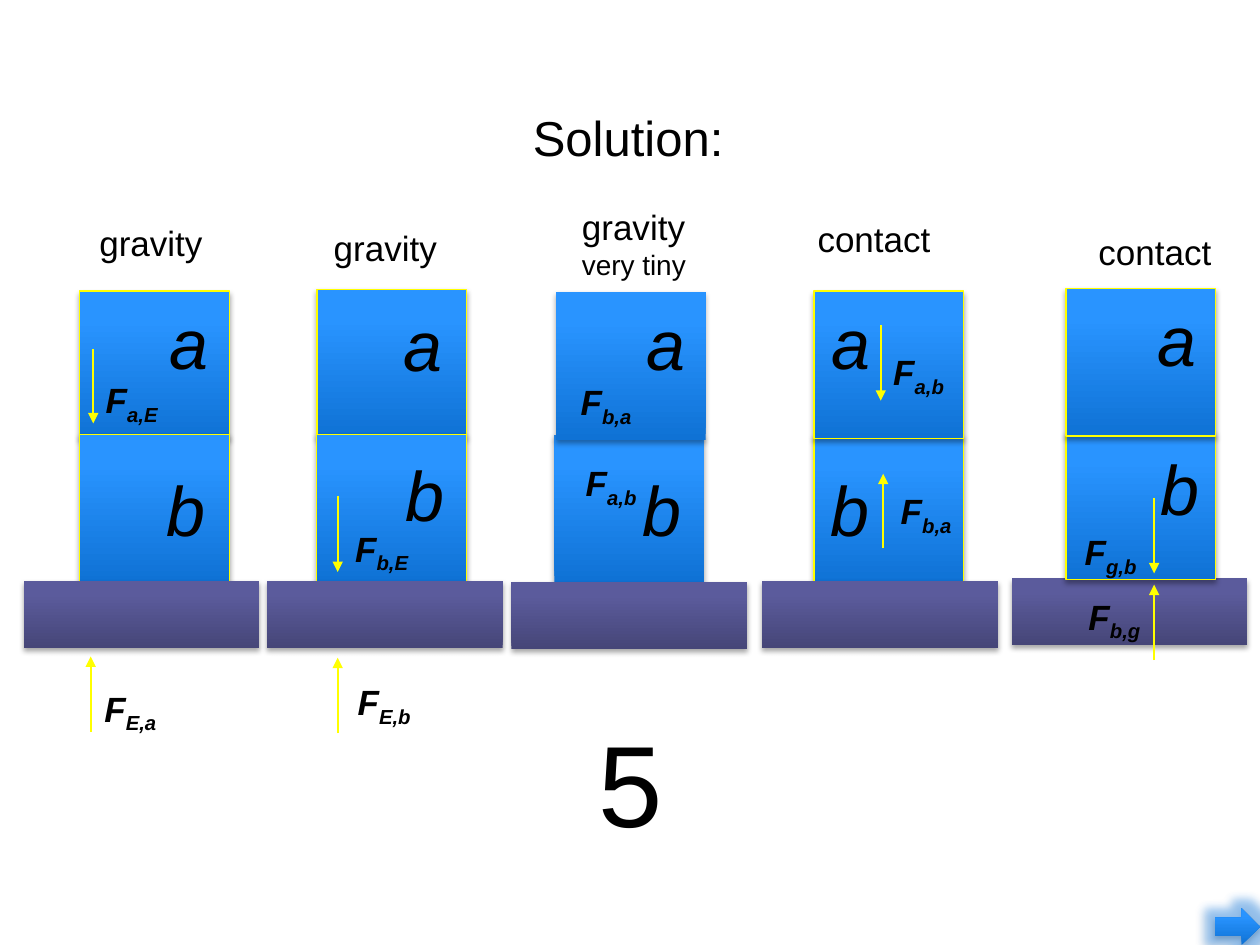
import pptx
import pptx.dml.color
import pptx.enum.dml
import pptx.enum.shapes
import pptx.enum.text
import pptx.oxml
import pptx.oxml.ns
import pptx.util
import lxml.etree

presentation = pptx.Presentation()
presentation.slide_width = pptx.util.Inches(10)
presentation.slide_height = pptx.util.Inches(7.5)
slide = presentation.slides.add_slide(presentation.slide_layouts[6])

# A grid of 100 columns by 75 rows; all positions below count in its cells.
COLUMN = presentation.slide_width / 100
ROW = presentation.slide_height / 75
BLUE = ("0F72D5", "2994FF")
PURPLE = ("464678", "5B5B9C")
YELLOW = "FFFF00"
SHAPES = pptx.enum.shapes.MSO_SHAPE
NAMESPACE = 'xmlns:a="http://schemas.openxmlformats.org/drawingml/2006/main"'
SHADOW = ('<a:outerShdw blurRad="39370" dist="22860" dir="5400000" rotWithShape="0">'
          '<a:srgbClr val="000000"><a:alpha val="35000"/></a:srgbClr></a:outerShdw>')
GLOW = ('<a:glow rad="139700"><a:srgbClr val="2994FF">'
        '<a:alpha val="40000"/></a:srgbClr></a:glow>')
color = pptx.dml.color.RGBColor.from_string


def add_text(text, left, top, width, height, size=20, subscript="", bold=False,
             italic=False, align=None, before=None, wrap=False, middle=False):
    """Add a text box, one paragraph a line; before is space above in percent."""
    box = slide.shapes.add_textbox(*(round(n) for n in (
        left * COLUMN, top * ROW, width * COLUMN, height * ROW)))
    frame = box.text_frame
    frame.word_wrap = wrap
    if middle:
        frame.vertical_anchor = pptx.enum.text.MSO_ANCHOR.MIDDLE
    else:
        frame.auto_size = pptx.enum.text.MSO_AUTO_SIZE.SHAPE_TO_FIT_TEXT
    for number, line in enumerate(text.split("\n")):
        paragraph = frame.add_paragraph() if number else frame.paragraphs[0]
        paragraph.alignment = align
        if before:
            paragraph.line_spacing = 0.9
            properties = paragraph._p.get_or_add_pPr()
            properties.set("marL", "285750")
            properties.set("indent", "-285750")
            properties.append(pptx.oxml.parse_xml(
                f'<a:spcBef {NAMESPACE}><a:spcPct val="{before * 1000}"/></a:spcBef>'))
        for part in filter(None, (line, subscript)):
            run = paragraph.add_run()
            run.text = part
            run.font.name = "Arial"
            run.font.size = pptx.util.Pt(16 if number else size)
            run.font.bold = bold
            run.font.italic = italic
            run.font.color.rgb = color("000000")
            if part == subscript:
                run._r.get_or_add_rPr().set("baseline", "-25000")


def add_block(left, top, width, height, fill, outline=None,
              kind=SHAPES.RECTANGLE, effects=SHADOW):
    """Add a shape shaded from dark at the bottom to light, with effects."""
    shape = slide.shapes.add_shape(kind, *(round(n) for n in (
        left * COLUMN, top * ROW, width * COLUMN, height * ROW)))
    shape.fill.gradient()
    shape.fill.gradient_angle = 90
    for stop, shade, position in zip(shape.fill.gradient_stops, fill, (0, 0.8)):
        stop.color.rgb = color(shade)
        stop.position = position
    if outline:
        shape.line.color.rgb = color(outline)
        shape.line.width = pptx.util.Pt(0.75)
    else:
        shape.line.fill.background()
    shape._element.spPr.append(pptx.oxml.parse_xml(
        f"<a:effectLst {NAMESPACE}>{effects}</a:effectLst>"))


add_text("Solution:", 9, 4.6, 81.7, 12.5, size=28, wrap=True, middle=True,
         align=pptx.enum.text.PP_ALIGN.CENTER)

# blocks: (left, top) from back to front, "ground" being the slab
# arrows: x, tail y, tip y; forces: subscript, left, top
panels = [
    dict(caption=("gravity", 6.9, 17.1), outline=YELLOW,
         blocks={"a": (6.3, 23.1), "b": (6.3, 34.5), "ground": (1.9, 46.1)},
         letters={"a": (12.5, 24), "b": (12.2, 37.3)},
         arrows=[(7.2, 58.1, 52.1), (7.4, 27.7, 33.6)],
         forces=[("E,a", 7.3, 54.1), ("a,E", 7.4, 29.6)]),
    dict(caption=("gravity", 25.5, 17.5), outline=YELLOW,
         blocks={"a": (25.15, 23), "b": (25.1, 34.5), "ground": (21.2, 46.1)},
         letters={"a": (31, 24.2), "b": (31.2, 36.1)},
         arrows=[(26.8, 58.2, 52.2), (26.8, 39.4, 45.4)],
         forces=[("E,b", 27.4, 53.6), ("b,E", 27.2, 41.4)]),
    dict(caption=("gravity\nvery tiny", 45.2, 15.8), outline=None,
         blocks={"b": (44, 34.5), "a": (44.1, 23.2), "ground": (40.6, 46.2)},
         letters={"a": (50.3, 24.1), "b": (50, 37.3)},
         arrows=[],
         forces=[("b,a", 45.1, 29.8), ("a,b", 45.5, 36.2)]),
    dict(caption=("contact", 63.9, 16.8), outline=YELLOW,
         blocks={"b": (64.6, 34.6), "a": (64.6, 23.1), "ground": (60.5, 46.1)},
         letters={"a": (65, 24), "b": (64.9, 37.3)},
         arrows=[(70.1, 43.5, 37.6), (69.9, 25.8, 31.8)],
         forces=[("a,b", 69.9, 27.4), ("b,a", 70.5, 38.4)]),
    dict(caption=("contact", 86.2, 17.8), outline=YELLOW,
         blocks={"ground": (80.3, 45.9), "b": (84.6, 34.3), "a": (84.6, 22.9)},
         letters={"a": (90.9, 23.8), "b": (91.1, 35.6)},
         arrows=[(91.6, 52.4, 46.4), (91.6, 39.5, 45.5)],
         forces=[("b,g", 85.4, 46.8), ("g,b", 85.1, 41.7)]),
]

for panel in panels:
    for name, (left, top) in panel["blocks"].items():
        if name == "ground":
            add_block(left, top, 18.7, 5.3, PURPLE)
        else:
            add_block(left, top, 11.9, 11.7, BLUE, outline=panel["outline"])
    for x, tail, tip in panel["arrows"]:
        arrow = slide.shapes.add_connector(
            pptx.enum.shapes.MSO_CONNECTOR.STRAIGHT,
            round(x * COLUMN), round(tail * ROW), round(x * COLUMN), round(tip * ROW))
        arrow.line.color.rgb = color(YELLOW)
        arrow.line.width = pptx.util.Pt(1)
        lxml.etree.SubElement(arrow.line._get_or_add_ln(),
                              pptx.oxml.ns.qn("a:tailEnd"), type="triangle")
        lxml.etree.SubElement(arrow._element.spPr, pptx.oxml.ns.qn("a:effectLst"))
    for subscript, left, top in panel["forces"]:
        add_text("F", left, top, 6.5, 4, subscript=subscript,
                 bold=True, italic=True, before=30)
    for letter, (left, top) in panel["letters"].items():
        add_text(letter, left, top, 5.1, 7, size=40, italic=True, before=50)
    caption, left, top = panel["caption"]
    add_text(caption, left, top, 11 if caption == "contact" else 10.3,
             7 if "\n" in caption else 4.4)

add_text("5", 46.5, 56, 18.5, 12.1, size=66, wrap=True)
add_block(96.4, 72.1, 3.6, 2.9, BLUE, kind=SHAPES.RIGHT_ARROW, effects=GLOW + SHADOW)

presentation.save("out.pptx")
